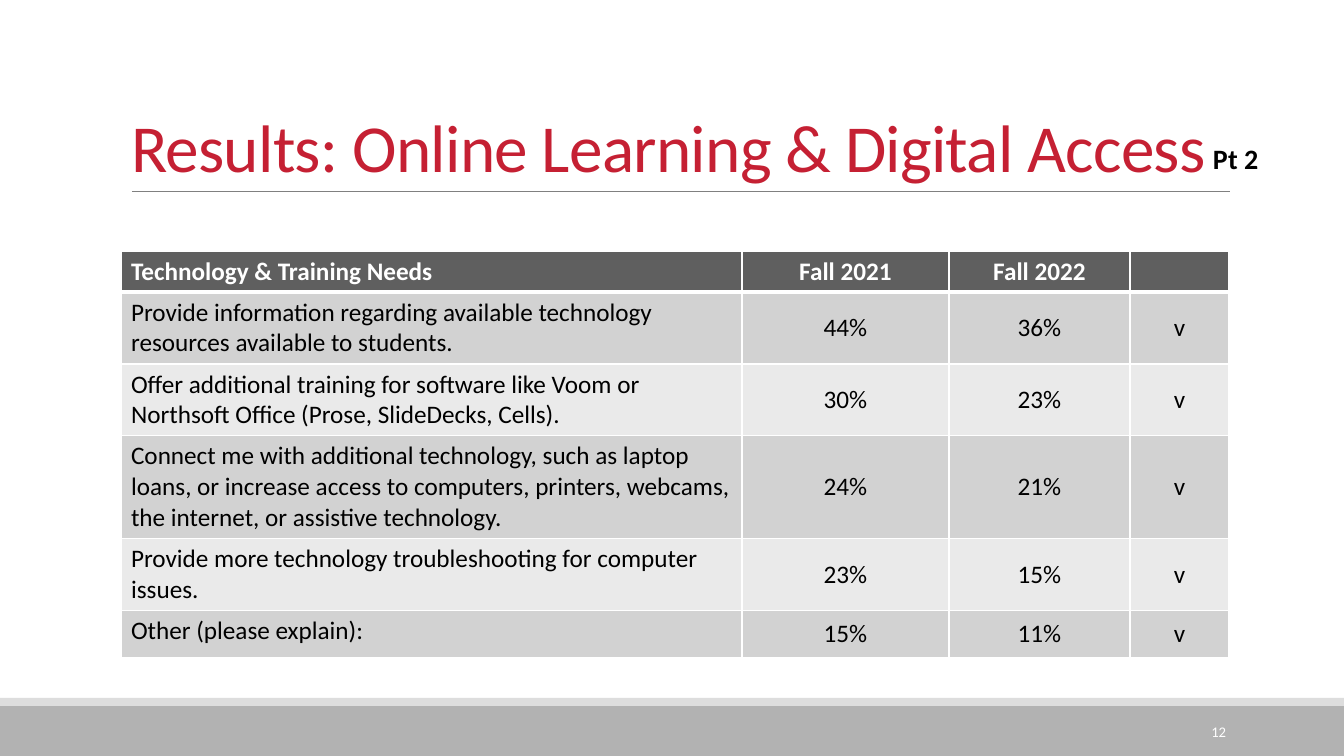
from lxml import etree
from pptx import Presentation
from pptx import util as u
from pptx.dml.color import RGBColor
from pptx.enum import shapes, text
from pptx.oxml import ns

RED = RGBColor(0xC5, 0x20, 0x33)
BLACK = RGBColor(0x00, 0x00, 0x00)
WHITE = RGBColor(0xFF, 0xFF, 0xFF)
RULE_GRAY = RGBColor(0x80, 0x80, 0x80)
FOOTER_GRAY = RGBColor(0xB2, 0xB2, 0xB2)
STRIP_GRAY = RGBColor(0xDD, 0xDD, 0xDD)
HEADER_GRAY = RGBColor(0x5F, 0x5F, 0x5F)
BANDS = (RGBColor(0xEA, 0xEA, 0xEA), RGBColor(0xD2, 0xD2, 0xD2))

HEADINGS = ("Technology & Training Needs", "Fall 2021", "Fall 2022", "")
NEEDS = (
    ("Provide information regarding available technology resources available to students.",
     "44%", "36%", "v"),
    ("Offer additional training for software like Voom or "
     "Northsoft Office (Prose, SlideDecks, Cells).", "30%", "23%", "v"),
    ("Connect me with additional technology, such as laptop loans, or increase access to "
     "computers, printers, webcams, the internet, or assistive technology.", "24%", "21%", "v"),
    ("Provide more technology troubleshooting for computer issues.", "23%", "15%", "v"),
    ("Other (please explain):", "15%", "11%", "v"),
)
COLUMN_WIDTHS = (621, 207, 181, 99)
ROW_HEIGHTS = (41, 72, 71, 103, 71, 47)


def px(length):
    """Turn px into EMU."""
    return u.Emu(round(length * 914400 / 100.8))


class SlideBuilder:
    """Holds the style and the current slide."""

    font = "Calibri"

    def __init__(self, deck):
        """Add a title-only slide to the deck."""
        self.slide = deck.slides.add_slide(deck.slide_layouts[5])

    def run(self, paragraph, wording, size, color, bold=False):
        """Add one styled run."""
        run = paragraph.add_run()
        run.text = wording
        run.font.name = self.font
        run.font.size = u.Pt(size)
        run.font.bold = bold
        run.font.color.rgb = color
        return run

    def band(self, left, top, width, height, color):
        """Add a plain filled rectangle."""
        band = self.slide.shapes.add_shape(
            shapes.MSO_SHAPE.RECTANGLE, *map(px, (left, top, width, height)))
        band.shadow.inherit = False
        band.fill.solid()
        band.fill.fore_color.rgb = color
        band.line.fill.background()

    def rule(self, left, right, y):
        """Add the thin line under the title."""
        rule = self.slide.shapes.add_connector(
            shapes.MSO_CONNECTOR.STRAIGHT, *map(px, (left, y, right, y)))
        rule.line.color.rgb = RULE_GRAY
        rule.line.width = u.Pt(0.5)
        etree.SubElement(rule._element.spPr, ns.qn("a:effectLst"))

    def title(self, left, top, width, height, wording):
        """Place and format the title placeholder."""
        title = self.slide.shapes.title
        title.left, title.top, title.width, title.height = map(px, (left, top, width, height))
        frame = title.text_frame
        frame.auto_size = text.MSO_AUTO_SIZE.NONE
        frame.word_wrap = True
        frame.vertical_anchor = text.MSO_ANCHOR.BOTTOM
        paragraph = frame.paragraphs[0]
        paragraph.alignment = text.PP_ALIGN.LEFT
        paragraph.line_spacing = 0.85
        run = self.run(paragraph, wording, 48, RED)
        run.font._element.set("spc", "-50")

    def label(self, left, top, width, height, wording, size, color,
              align=text.PP_ALIGN.LEFT, anchor=text.MSO_ANCHOR.TOP, bold=False, wrap=True):
        """Add a text box of one line."""
        frame = self.slide.shapes.add_textbox(
            *map(px, (left, top, width, height))).text_frame
        frame.word_wrap = wrap
        frame.vertical_anchor = anchor
        frame.paragraphs[0].alignment = align
        self.run(frame.paragraphs[0], wording, size, color, bold)

    def borders(self, cell, bottom):
        """Draw white borders around a cell."""
        properties = cell._tc.get_or_add_tcPr()
        widths = {"lnL": 1, "lnR": 1, "lnT": 1, "lnB": bottom}
        for place, (side, width) in enumerate(widths.items()):
            line = etree.Element(ns.qn(f"a:{side}"), w=str(u.Pt(width)))
            fill = etree.SubElement(line, ns.qn("a:solidFill"))
            etree.SubElement(fill, ns.qn("a:srgbClr"), val=str(WHITE))
            properties.insert(place, line)

    def table(self, left, top, rows, widths, heights):
        """Add a banded table with a header row."""
        table = self.slide.shapes.add_table(
            len(rows), len(widths),
            *map(px, (left, top, sum(widths), sum(heights)))).table
        for column, width in zip(table.columns, widths):
            column.width = px(width)
        for r, (entries, height) in enumerate(zip(rows, heights)):
            header = r == 0
            table.rows[r].height = px(height)
            for c, wording in enumerate(entries):
                cell = table.cell(r, c)
                cell.fill.solid()
                cell.fill.fore_color.rgb = HEADER_GRAY if header else BANDS[r % 2]
                self.borders(cell, 3 if header else 1)
                paragraph = cell.text_frame.paragraphs[0]
                if c:
                    paragraph.alignment = text.PP_ALIGN.CENTER
                    if not header:
                        cell.vertical_anchor = text.MSO_ANCHOR.MIDDLE
                if wording:
                    self.run(paragraph, wording, 18, WHITE if header else BLACK, header)


def main():
    """Build and save the slide."""
    deck = Presentation()
    deck.slide_width, deck.slide_height = px(1344), px(756)
    page = SlideBuilder(deck)
    page.band(0, 706, 1344, 50, FOOTER_GRAY)
    page.band(0, 698, 1344, 8, STRIP_GRAY)
    page.rule(132, 1230, 191)
    page.title(121, 31, 1109, 160, "Results: Online Learning & Digital Access")
    page.table(121, 251, (HEADINGS, *NEEDS), COLUMN_WIDTHS, ROW_HEIGHTS)
    page.label(1092, 712, 144, 40, "12", 10.5, WHITE,
               align=text.PP_ALIGN.RIGHT, anchor=text.MSO_ANCHOR.MIDDLE)
    page.label(1203, 137, 66, 44, "Pt 2", 20, BLACK, bold=True, wrap=False)
    deck.save("out.pptx")


if __name__ == "__main__":
    main()
